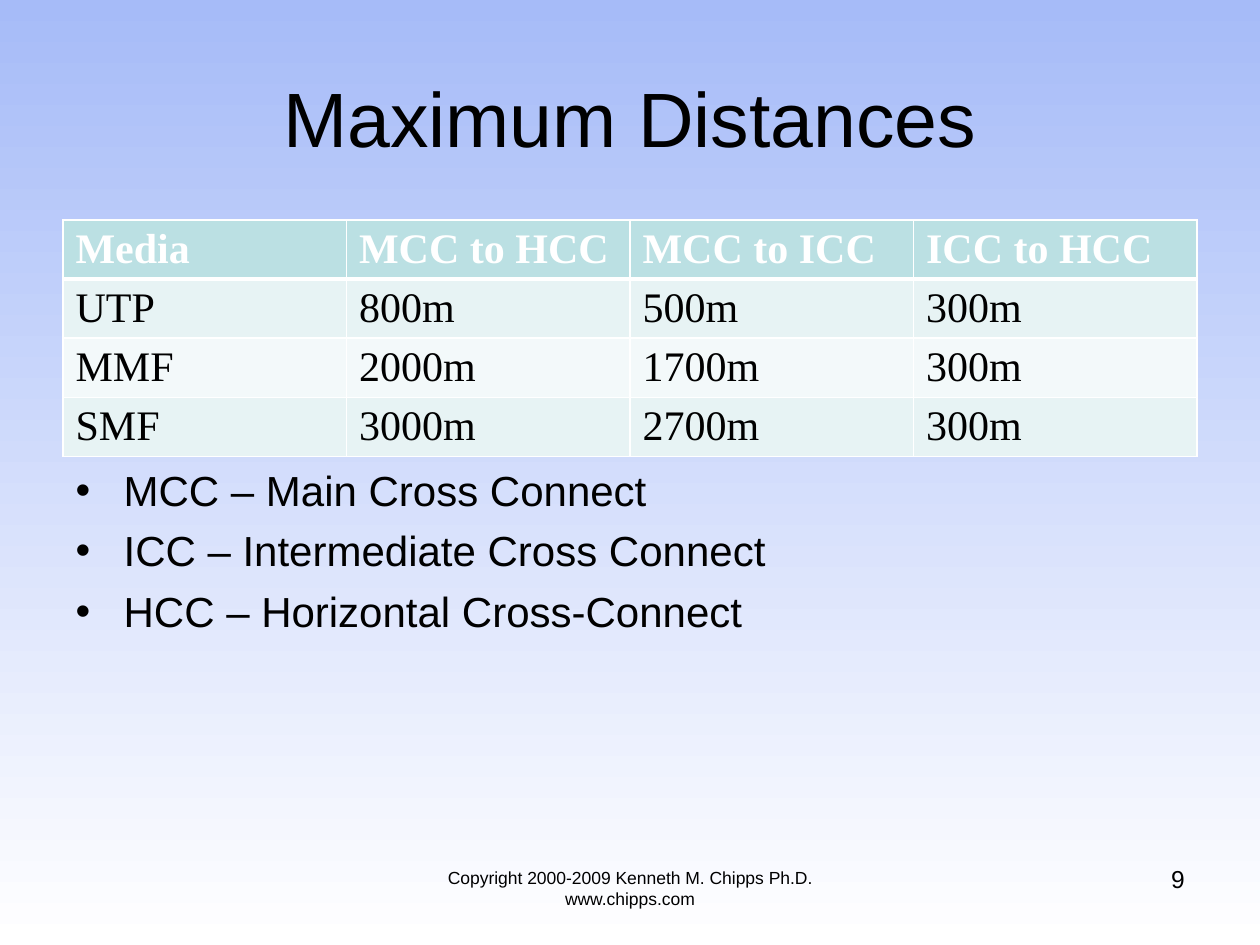
from pptx import Presentation
from pptx.dml.color import RGBColor
from pptx.enum.text import MSO_ANCHOR, PP_ALIGN
from pptx.oxml.xmlchemy import OxmlElement
from pptx.util import Emu, Pt

LEFT, MID, RIGHT = PP_ALIGN.LEFT, PP_ALIGN.CENTER, PP_ALIGN.RIGHT
TOP, CENTER = MSO_ANCHOR.TOP, MSO_ANCHOR.MIDDLE
SCALE = 914400 / 126
BLACK = RGBColor(0x00, 0x00, 0x00)
WHITE = RGBColor(0xFF, 0xFF, 0xFF)
SKY = RGBColor(0xA6, 0xBB, 0xF8)
TEAL = RGBColor(0xBB, 0xE0, 0xE3)
MIST = RGBColor(0xE7, 0xF3, 0xF4)
PALE = RGBColor(0xF3, 0xF9, 0xFA)
ROWS = [
    ["Media", "MCC to HCC", "MCC to ICC", "ICC to HCC"],
    ["UTP", "800m", "500m", "300m"],
    ["MMF", "2000m", "1700m", "300m"],
    ["SMF", "3000m", "2700m", "300m"],
]
TERMS = [
    "MCC – Main Cross Connect",
    "ICC – Intermediate Cross Connect",
    "HCC – Horizontal Cross-Connect",
]


def px(num):
    """Turn pixels into EMU."""
    return Emu(round(num * SCALE))


def place(shape, box):
    """Move and size a shape to a pixel box."""
    shape.left, shape.top, shape.width, shape.height = map(px, box)


def write(frame, lines, size=24, font="Arial", color=BLACK, bold=False,
          align=LEFT, anchor=TOP, after=0):
    """Fill a text frame with formatted paragraphs."""
    frame.word_wrap = True
    frame.vertical_anchor = anchor
    for i, line in enumerate(lines):
        para = frame.add_paragraph() if i else frame.paragraphs[0]
        para.alignment = align
        para.space_before, para.space_after = Pt(0), Pt(after)
        run = para.add_run()
        run.text = line
        run.font.size, run.font.name = Pt(size), font
        run.font.bold, run.font.color.rgb = bold, color


def paint(slide):
    """Fade the background from sky blue down to white."""
    fill = slide.background.fill
    fill.gradient()
    fill.gradient_angle = 270
    for stop, color in zip(fill.gradient_stops, (SKY, WHITE)):
        stop.color.rgb = color


def head(slide, box):
    """Set the slide title."""
    title = slide.shapes.title
    place(title, box)
    write(title.text_frame, ["Maximum Distances"], size=44, align=MID,
          anchor=CENTER)


def edge(cell, side, width):
    """Draw one white border of a cell."""
    line = OxmlElement(f"a:{side}")
    line.set("w", str(Pt(width)))
    fill = OxmlElement("a:solidFill")
    color = OxmlElement("a:srgbClr")
    color.set("val", str(WHITE))
    fill.append(color)
    line.append(fill)
    cell._tc.get_or_add_tcPr().append(line)


def grid(slide, box):
    """Build the table of distances."""
    table = slide.shapes.add_table(len(ROWS), len(ROWS[0]),
                                   *map(px, box)).table
    for r, row in enumerate(ROWS):
        for c, text in enumerate(row):
            cell = table.cell(r, c)
            write(cell.text_frame, [text], font="Times New Roman",
                  color=BLACK if r else WHITE, bold=r == 0)
            for side in ("lnL", "lnR", "lnT", "lnB"):
                thick = (r, side) in ((0, "lnB"), (1, "lnT"))
                edge(cell, side, 3 if thick else 1)
            cell.fill.solid()
            cell.fill.fore_color.rgb = (MIST if r % 2 else PALE) if r else TEAL


def terms(slide, box):
    """List what the short names mean."""
    body = slide.placeholders[1]
    place(body, box)
    write(body.text_frame, TERMS, after=5.8)
    for para in body.text_frame.paragraphs:
        props = para._p.get_or_add_pPr()
        props.set("marL", str(px(48)))
        props.set("indent", str(-px(48)))
        mark = OxmlElement("a:buChar")
        mark.set("char", "•")
        props.append(mark)


def note(slide, box, text, size, align):
    """Add a line of small text at the foot."""
    shape = slide.shapes.add_textbox(*map(px, box))
    write(shape.text_frame, [text], size=size, align=align)


def main():
    """Build and save the slide."""
    deck = Presentation()
    deck.slide_width, deck.slide_height = px(1260), px(945)
    slide = deck.slides.add_slide(deck.slide_layouts[1])
    paint(slide)
    head(slide, (63, 38, 1134, 157))
    grid(slide, (63, 220, 1134, 236))
    note(slide, (378, 861, 504, 66),
         "Copyright 2000-2009 Kenneth M. Chipps Ph.D. www.chipps.com", 10, MID)
    note(slide, (903, 858, 294, 66), "9", 14, RIGHT)
    terms(slide, (63, 458, 1134, 386))
    deck.save("out.pptx")


if __name__ == "__main__":
    main()
